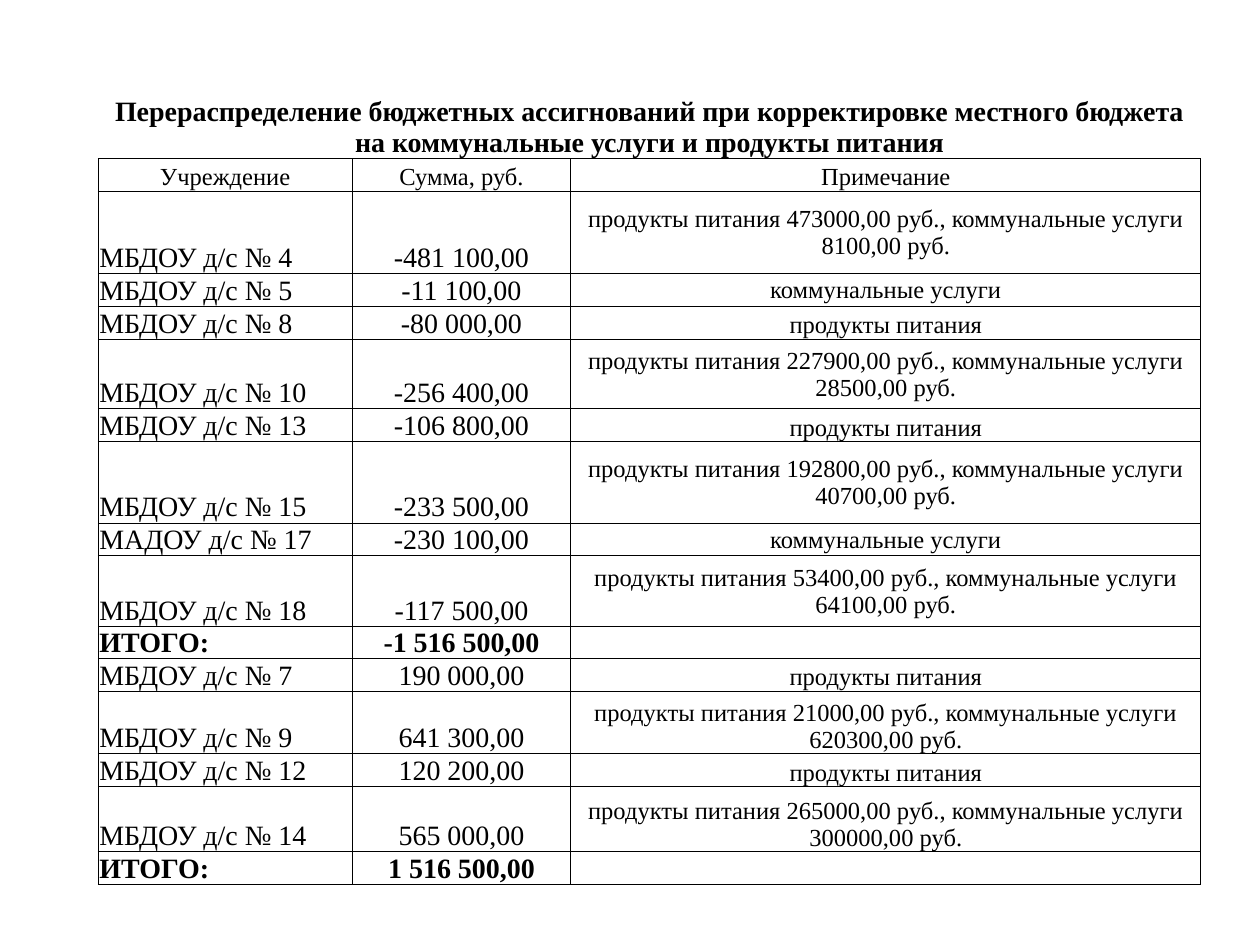
"""Build a slide with the table of budget reallocations for kindergartens."""
from lxml.etree import SubElement
from pptx import Presentation
from pptx.dml.color import RGBColor
from pptx.enum.text import MSO_ANCHOR as Anchor, PP_ALIGN as Align
from pptx.oxml.ns import qn
from pptx.util import Pt

FONT = "Times New Roman"
BLACK, WHITE = "000000", "FFFFFF"
TITLE = ("Перераспределение бюджетных ассигнований при корректировке "
         "местного бюджета на коммунальные услуги и продукты питания")
HEADERS = ("Учреждение", "Сумма, руб.", "Примечание")
FOOD, UTILITIES, TOTAL = "продукты питания", "коммунальные услуги", "ИТОГО:"
BOTH = FOOD + " {} руб., " + UTILITIES + " {} руб."
MIDDLE, BOTTOM = Anchor.MIDDLE, Anchor.BOTTOM
ROWS = [
    ("МБДОУ д/с № 4", "-481 100,00", BOTH.format("473000,00", "8100,00"), MIDDLE, 47.2),
    ("МБДОУ д/с № 5", "-11 100,00", UTILITIES, MIDDLE, 18.7),
    ("МБДОУ д/с № 8", "-80 000,00", FOOD, BOTTOM, 18.7),
    ("МБДОУ д/с № 10", "-256 400,00", BOTH.format("227900,00", "28500,00"), MIDDLE, 39.8),
    ("МБДОУ д/с № 13", "-106 800,00", FOOD, BOTTOM, 18.7),
    ("МБДОУ д/с № 15", "-233 500,00", BOTH.format("192800,00", "40700,00"), MIDDLE, 46.6),
    ("МАДОУ д/с № 17", "-230 100,00", UTILITIES, MIDDLE, 18.7),
    ("МБДОУ д/с № 18", "-117 500,00", BOTH.format("53400,00", "64100,00"), MIDDLE, 40.3),
    (TOTAL, "-1 516 500,00", "", BOTTOM, 18.3),
    ("МБДОУ д/с № 7", "190 000,00", FOOD, BOTTOM, 18.7),
    ("МБДОУ д/с № 9", "641 300,00", BOTH.format("21000,00", "620300,00"), BOTTOM, 35.8),
    ("МБДОУ д/с № 12", "120 200,00", FOOD, BOTTOM, 18.7),
    ("МБДОУ д/с № 14", "565 000,00", BOTH.format("265000,00", "300000,00"), BOTTOM, 37.4),
    (TOTAL, "1 516 500,00", "", BOTTOM, 18.7),
]
LEFT, TOP = 56.2, 39.6
COLUMN_WIDTHS = (145, 125, 360)
ROW_HEIGHTS = (51, 18.7, *(row[-1] for row in ROWS))
FIRST_FILLED_ROW = 8


def color(value):
    return RGBColor.from_string(value)


def set_borders(cell, sides):
    properties = cell._tc.get_or_add_tcPr()
    for side in "LRTB":
        line = SubElement(properties, qn(f"a:ln{side}"), w=str(Pt(0.5)))
        if side in sides:
            fill = SubElement(line, qn("a:solidFill"))
            SubElement(fill, qn("a:srgbClr"), val=BLACK)
        else:
            SubElement(line, qn("a:noFill"))


def write_cell(cell, text, size, bold=False, align=Align.CENTER,
               anchor=BOTTOM, sides="LRTB", fill=None):
    set_borders(cell, sides)
    if fill:
        cell.fill.solid()
        cell.fill.fore_color.rgb = color(fill)
    else:
        cell.fill.background()
    cell.margin_left = cell.margin_right = cell.margin_top = Pt(0.6)
    cell.margin_bottom = 0
    cell.vertical_anchor = anchor
    paragraph = cell.text_frame.paragraphs[0]
    paragraph.alignment = align
    if not text:
        SubElement(paragraph._p, qn("a:endParaRPr"), sz=str(size * 100))
        return
    run = paragraph.add_run()
    run.text = text
    run.font.name = FONT
    run.font.size = Pt(size)
    run.font.bold = bold
    run.font.color.rgb = color(BLACK)


def add_budget_table(slide):
    frame = slide.shapes.add_table(
        len(ROW_HEIGHTS), len(COLUMN_WIDTHS), Pt(LEFT), Pt(TOP),
        Pt(sum(COLUMN_WIDTHS)), Pt(sum(ROW_HEIGHTS)))
    table = frame.table
    table.first_row = table.horz_banding = False
    for column, width in zip(table.columns, COLUMN_WIDTHS):
        column.width = Pt(width)
    for row, height in zip(table.rows, ROW_HEIGHTS):
        row.height = Pt(height)

    table.cell(0, 0).merge(table.cell(0, len(COLUMN_WIDTHS) - 1))
    for column, text in enumerate((TITLE, "", "")):
        write_cell(table.cell(0, column), text, 16, bold=True, sides="B")
    for column, text in enumerate(HEADERS):
        write_cell(table.cell(1, column), text, 14)
    for index, (name, amount, note, anchor, _) in enumerate(ROWS, start=2):
        bold = name == TOTAL
        fill = WHITE if index >= FIRST_FILLED_ROW else None
        write_cell(table.cell(index, 0), name, 16, bold, Align.LEFT, fill=fill)
        write_cell(table.cell(index, 1), amount, 16, bold)
        write_cell(table.cell(index, 2), note, 14, anchor=anchor)


def main():
    presentation = Presentation()
    presentation.slide_width, presentation.slide_height = Pt(720), Pt(540)
    slide = presentation.slides.add_slide(presentation.slide_layouts[6])
    add_budget_table(slide)
    presentation.save("out.pptx")


if __name__ == "__main__":
    main()
